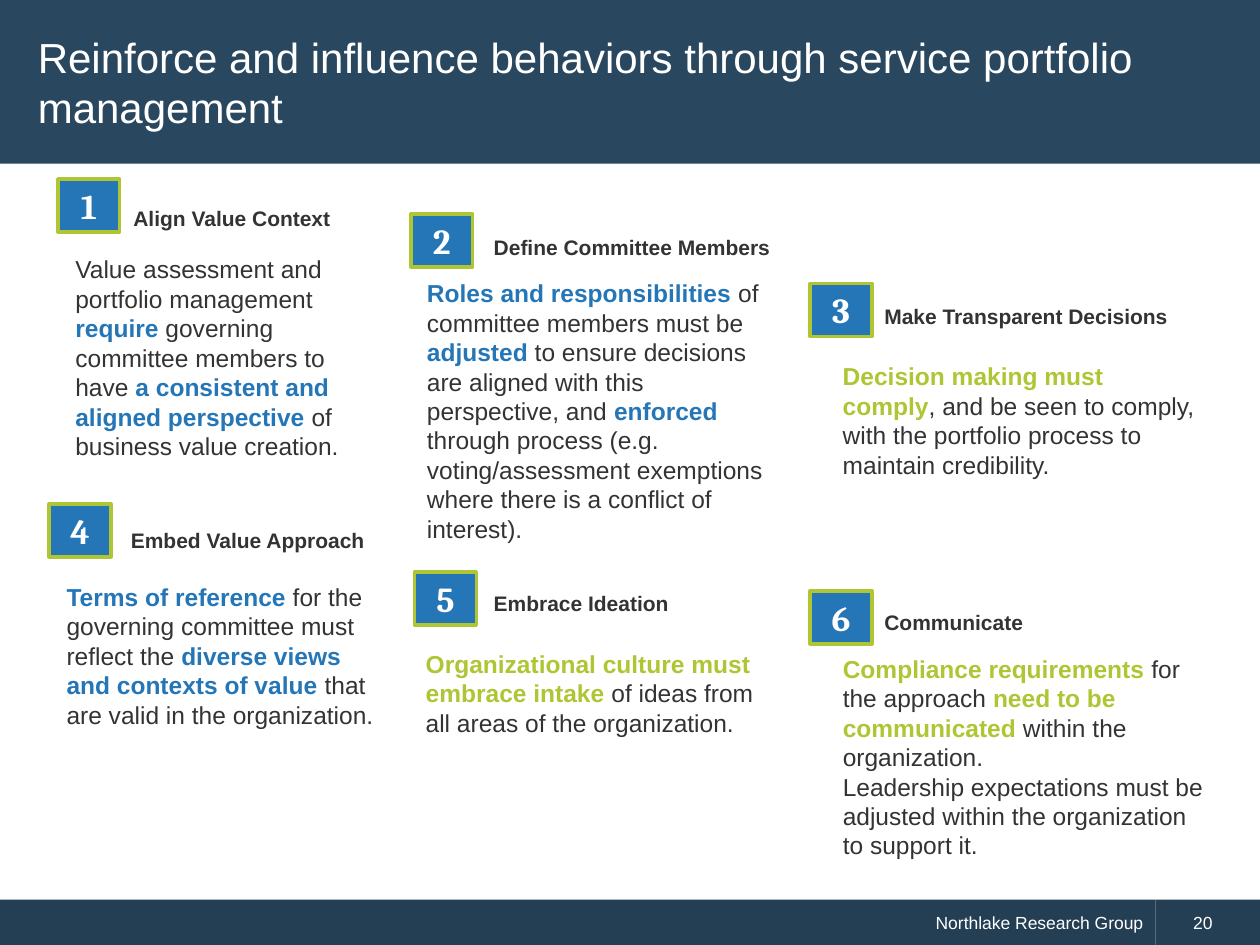
from pptx import Presentation
from pptx.dml.color import RGBColor
from pptx.enum import shapes, text
from pptx.util import Inches, Pt

COLORS = {
    "title": "29475F",
    "footer": "243F54",
    "blue": "2576B7",
    "green": "B0C534",
    "ink": "333333",
    "white": "FFFFFF",
}
FORMATS = {
    "title": {"name": "Arial", "size": Pt(24), "bold": False},
    "footer": {"name": "Arial", "size": Pt(10), "bold": False},
    "badge": {"name": "Cambria", "size": Pt(20), "bold": True},
    "heading": {"name": "Arial", "size": Pt(12), "bold": True},
    "body": {"name": "Arial", "size": Pt(14), "bold": False},
    "accent": {"name": "Arial", "size": Pt(14), "bold": True},
}
BADGE_SIZE = (0.49, 0.42)
HEADING_SIZE = (2.55, 0.3)

CARDS = [
    {"box": (0.46, 1.42, 2.54, 1.75), "heading_at": (0.5, 0.16), "body_at": (0.04, 0.55),
     "accent": "blue", "heading": "Align Value Context",
     "body": ["Value assessment and portfolio management *require *governing committee "
              "members to have *a consistent and aligned perspective *of business value "
              "creation."]},
    {"box": (3.26, 1.7, 2.97, 2.22), "heading_at": (0.56, 0.11), "body_at": (0.03, 0.46),
     "accent": "blue", "heading": "Define Committee Members",
     "body": ["*Roles and responsibilities *of committee members must be *adjusted* to "
              "ensure decisions are aligned with this perspective, and *enforced* through "
              "process (e.g. voting/assessment exemptions where there is a conflict of "
              "interest)."]},
    {"box": (6.43, 2.25, 3.03, 1.04), "heading_at": (0.49, 0.11), "body_at": (0.16, 0.57),
     "accent": "green", "heading": "Make Transparent Decisions",
     "body": ["*Decision making must comply*, and be seen to comply, with the portfolio "
              "process to maintain credibility."]},
    {"box": (0.39, 4, 2.77, 1.28), "heading_at": (0.55, 0.14), "body_at": (0.04, 0.57),
     "accent": "blue", "heading": "Embed Value Approach",
     "body": ["*Terms of reference *for the governing committee must reflect the *diverse "
              "views and contexts of value *that are valid in the organization."]},
    {"box": (3.29, 4.54, 2.91, 0.81), "heading_at": (0.53, 0.1), "body_at": (-0.01, 0.56),
     "accent": "green", "heading": "Embrace Ideation",
     "body": ["*Organizational culture must embrace intake* of ideas from all areas of "
              "the organization."]},
    {"box": (6.43, 4.69, 3.08, 1.75), "heading_at": (0.49, 0.1), "body_at": (0.16, 0.45),
     "accent": "green", "heading": "Communicate",
     "body": ["*Compliance requirements *for the approach *need to be communicated "
              "*within the organization.",
              "Leadership expectations must be adjusted within the organization to "
              "support it."]},
]


def rgb(color):
    return RGBColor.from_string(COLORS[color])


def add_run(paragraph, words, style, color):
    run = paragraph.add_run()
    run.text = words
    for attribute, value in FORMATS[style].items():
        setattr(run.font, attribute, value)
    run.font.color.rgb = rgb(color)


def add_panel(slide, box, fill, words, style, align, inset=0.1, outline=None):
    panel = slide.shapes.add_shape(shapes.MSO_SHAPE.RECTANGLE, *map(Inches, box))
    panel.shadow.inherit = False
    panel.fill.solid()
    panel.fill.fore_color.rgb = rgb(fill)
    if outline:
        panel.line.color.rgb = rgb(outline)
        panel.line.width = Pt(2)
    else:
        panel.line.fill.background()
    frame = panel.text_frame
    frame.word_wrap = True
    frame.vertical_anchor = text.MSO_ANCHOR.MIDDLE
    frame.margin_left = frame.margin_right = Inches(inset)
    paragraph = frame.paragraphs[0]
    paragraph.alignment = align
    add_run(paragraph, words, style, "white")
    return panel


def add_copy(slide, box, paragraphs, style, accent="ink"):
    frame = slide.shapes.add_textbox(*map(Inches, box)).text_frame
    frame.word_wrap = True
    for index, words in enumerate(paragraphs):
        paragraph = frame.add_paragraph() if index else frame.paragraphs[0]
        for position, part in enumerate(words.split("*")):
            if part:
                emphasized = position % 2
                add_run(paragraph, part, "accent" if emphasized else style,
                        accent if emphasized else "ink")


def add_title(slide, box):
    title = add_panel(slide, box, "title",
                      "Reinforce and influence behaviors through service portfolio management",
                      "title", text.PP_ALIGN.LEFT, inset=0.3)
    title.text_frame.paragraphs[0].space_after = Pt(8)


def add_footer(slide, box):
    left, top, width, height = box
    number_width = 0.83
    owner_width = width - number_width
    add_panel(slide, (left, top, owner_width, height), "footer",
              "Northlake Research Group", "footer", text.PP_ALIGN.RIGHT)
    add_panel(slide, (left + owner_width, top, number_width, height), "footer",
              "20", "footer", text.PP_ALIGN.LEFT, inset=0.3)


def add_card(slide, number, card):
    left, top, *body_size = card["box"]

    def placed(offset, size):
        return (left + offset[0], top + offset[1], *size)

    add_panel(slide, placed((0, 0), BADGE_SIZE), "blue", str(number), "badge",
              text.PP_ALIGN.CENTER, outline="green")
    add_copy(slide, placed(card["heading_at"], HEADING_SIZE), [card["heading"]], "heading")
    add_copy(slide, placed(card["body_at"], body_size), card["body"], "body", card["accent"])


def main():
    deck = Presentation()
    deck.slide_width, deck.slide_height = Inches(10), Inches(7.5)
    slide = deck.slides.add_slide(deck.slide_layouts[6])
    add_footer(slide, (0, 7.14, 10, 0.37))
    add_title(slide, (0, 0, 10, 1.3))
    for number, card in enumerate(CARDS, 1):
        add_card(slide, number, card)
    deck.save("out.pptx")


if __name__ == "__main__":
    main()
